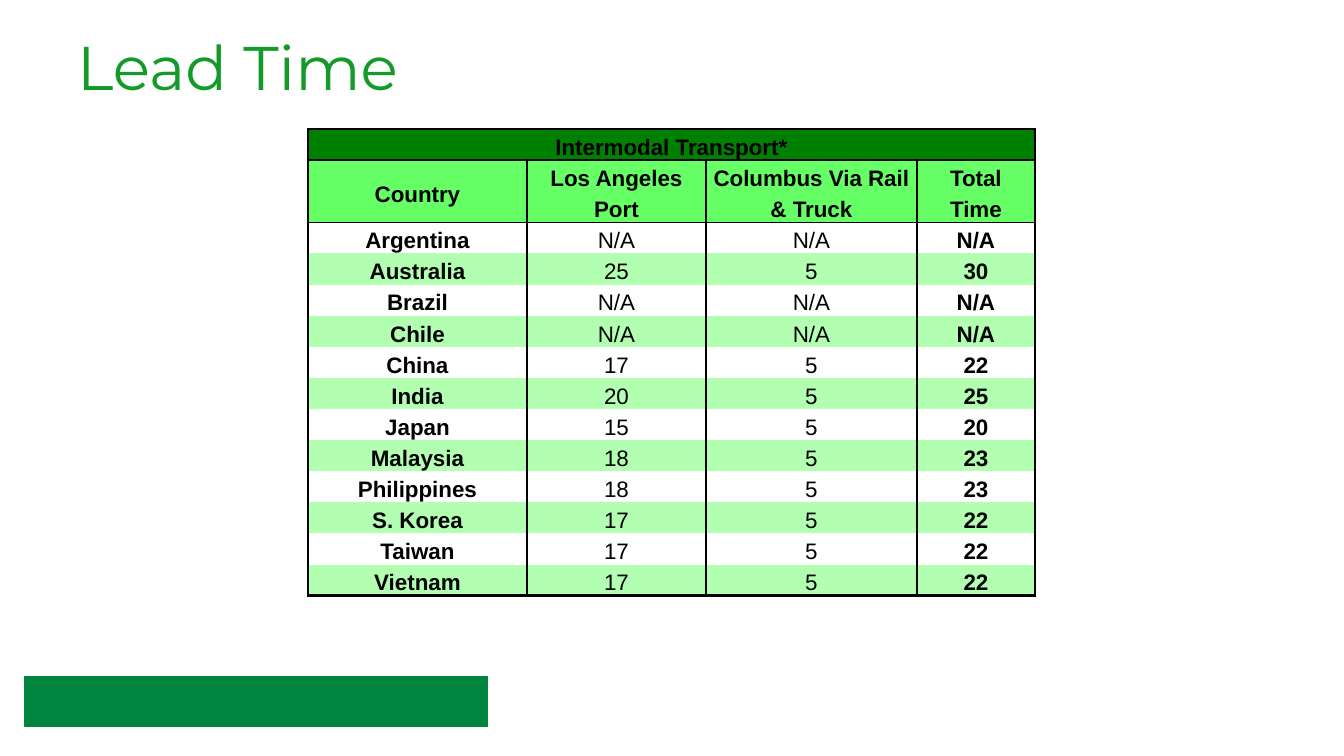
import pptx
import pptx.util
import pptx.dml.color
import pptx.enum.shapes
import pptx.enum.text
from lxml import etree

PX = 914400 / 100.8
COLORS = {
    "title": "139A29", "banner": "008000", "header": "66FF66",
    "odd": "FFFFFF", "even": "B2FFB2", "footer": "00853E", "black": "000000",
}
THICK, THIN = 2.25, 1


def px(n):
    return pptx.util.Emu(round(n * PX))


def color(name):
    return pptx.dml.color.RGBColor.from_string(COLORS[name])


class LeadTimeSlide:
    def __init__(self, prs):
        self.s = prs.slides.add_slide(prs.slide_layouts[5])

    def style(self, p, font, size, name, bold, align):
        p.alignment = align
        for r in p.runs:
            r.font.name = font
            r.font.size = pptx.util.Pt(size)
            r.font.bold = bold
            r.font.color.rgb = color(name)

    def title(self, text, x, y, w, h):
        sp = self.s.shapes.title
        sp.left, sp.top, sp.width, sp.height = px(x), px(y), px(w), px(h)
        tf = sp.text_frame
        tf.text = text
        tf.vertical_anchor = pptx.enum.text.MSO_ANCHOR.MIDDLE
        self.style(tf.paragraphs[0], "Montserrat", 44, "title", False,
                   pptx.enum.text.PP_ALIGN.LEFT)

    def rect(self, name, x, y, w, h):
        sp = self.s.shapes.add_shape(pptx.enum.shapes.MSO_SHAPE.RECTANGLE,
                                     px(x), px(y), px(w), px(h))
        sp.shadow.inherit = False
        sp.fill.solid()
        sp.fill.fore_color.rgb = color(name)
        sp.line.color.rgb = color(name)
        sp.line.width = pptx.util.Pt(0.75)

    def borders(self, cell, widths):
        """Set left, right, top and bottom borders; 0 means no line."""
        tcPr = cell._tc.get_or_add_tcPr()
        for side, width in zip("LRTB", widths):
            ln = etree.SubElement(tcPr, pptx.oxml.ns.qn("a:ln" + side))
            if not width:
                etree.SubElement(ln, pptx.oxml.ns.qn("a:noFill"))
                continue
            ln.set("w", str(pptx.util.Pt(width)))
            fill = etree.SubElement(ln, pptx.oxml.ns.qn("a:solidFill"))
            etree.SubElement(fill, pptx.oxml.ns.qn("a:srgbClr"), val=COLORS["black"])

    def cell(self, cell, text, fill, bold, widths):
        self.borders(cell, widths)
        cell.fill.solid()
        cell.fill.fore_color.rgb = color(fill)
        cell.margin_left = cell.margin_right = px(7)
        cell.margin_top = cell.margin_bottom = 0
        cell.vertical_anchor = pptx.enum.text.MSO_ANCHOR.MIDDLE
        cell.text_frame.text = text
        p = cell.text_frame.paragraphs[0]
        p.line_spacing = 1.25
        self.style(p, "Arial", 16, "black", bold, pptx.enum.text.PP_ALIGN.CENTER)

    def table(self, rows, x, y, col_widths, row_heights):
        tbl = self.s.shapes.add_table(len(rows), len(col_widths), px(x), px(y),
                                      px(sum(col_widths)), px(sum(row_heights))).table
        tbl.first_row = tbl.horz_banding = False
        for col, w in zip(tbl.columns, col_widths):
            col.width = px(w)
        for row, h in zip(tbl.rows, row_heights):
            row.height = px(h)
        last_row, last_col = len(rows) - 1, len(col_widths) - 1
        tbl.cell(0, 0).merge(tbl.cell(0, last_col))

        for i, row in enumerate(rows):
            # Banner, column headings, then alternating bands
            fill = ("banner", "header")[i] if i < 2 else ("odd", "even")[i % 2]
            top = THICK if i < 2 else THIN if i == 2 else 0
            bottom = THICK if i in (0, last_row) else THIN if i == 1 else 0
            for j, text in enumerate(row):
                left = THICK if i == 0 or j == 0 else THIN
                right = THICK if i == 0 or j == last_col else THIN
                bold = i < 2 or j in (0, last_col)
                self.cell(tbl.cell(i, j), text, fill, bold, (left, right, top, bottom))


TRANSIT_DAYS = {
    "Argentina": None, "Australia": 25, "Brazil": None, "Chile": None,
    "China": 17, "India": 20, "Japan": 15, "Malaysia": 18,
    "Philippines": 18, "S. Korea": 17, "Taiwan": 17, "Vietnam": 17,
}
RAIL_DAYS = 5


def country_row(country, port):
    if port is None:
        return [country] + ["N/A"] * 3
    return [country, str(port), str(RAIL_DAYS), str(port + RAIL_DAYS)]


def main():
    prs = pptx.Presentation()
    prs.slide_width, prs.slide_height = px(1344), px(756)
    slide = LeadTimeSlide(prs)

    # Title
    slide.title("Lead Time", 67, 3, 1210, 126)

    # Lead time table
    rows = [["Intermodal Transport*"],
            ["Country", "Los Angeles Port", "Columbus Via Rail & Truck", "Total Time"]]
    rows += [country_row(*item) for item in TRANSIT_DAYS.items()]
    slide.table(rows, 308, 129, [219, 179, 211, 118], [28, 57] + [28] * len(TRANSIT_DAYS))

    # Footer bar
    slide.rect("footer", 25, 677, 463, 50)

    prs.save("out.pptx")


if __name__ == "__main__":
    main()
